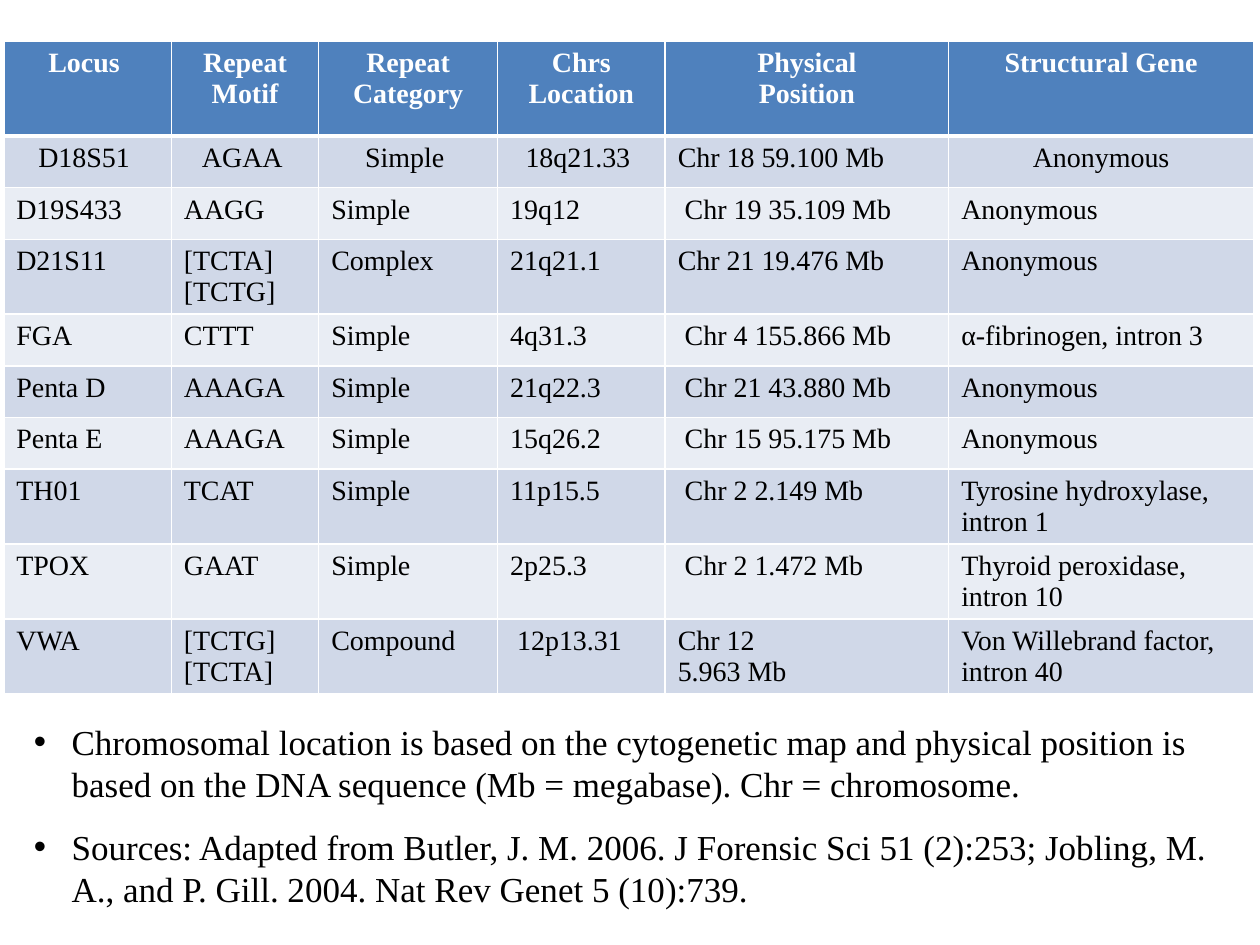
from typing import NamedTuple

from lxml.etree import SubElement
from pptx import Presentation
from pptx.dml.color import RGBColor
from pptx.enum.text import MSO_AUTO_SIZE, PP_ALIGN
from pptx.oxml.ns import qn
from pptx.util import Inches, Pt

FONT = "Times New Roman"
COLORS = {
    "header": "4F81BD",
    "odd": "D0D8E8",
    "even": "E9EDF4",
    "white": "FFFFFF",
    "black": "000000",
}
COLUMN_WIDTHS = (1.33, 1.17, 1.42, 1.33, 2.25, 2.42)
HEADER_HEIGHT = 0.75
ROW_HEIGHT = 0.41


class Marker(NamedTuple):
    locus: str
    motif: str
    category: str
    location: str
    position: str
    gene: str


class CellStyle(NamedTuple):
    fill: str
    text: str
    bold: bool
    top: float
    bottom: float


HEADER = Marker("Locus ", "Repeat\nMotif", "Repeat\nCategory", "Chrs Location",
                "Physical\nPosition", "Structural Gene")
MARKERS = [
    Marker("D18S51 ", "AGAA ", "Simple ", "18q21.33 ", "Chr 18 59.100 Mb", "Anonymous"),
    Marker("D19S433", "AAGG", "Simple", "19q12", " Chr 19 35.109 Mb", "Anonymous"),
    Marker("D21S11", "[TCTA]\n[TCTG]", "Complex", "21q21.1", "Chr 21 19.476 Mb", "Anonymous"),
    Marker("FGA", "CTTT", "Simple", "4q31.3", " Chr 4 155.866 Mb", "α-fibrinogen, intron 3"),
    Marker("Penta D", "AAAGA", "Simple", "21q22.3", " Chr 21 43.880 Mb", "Anonymous"),
    Marker("Penta E", "AAAGA", "Simple", "15q26.2", " Chr 15 95.175 Mb", "Anonymous"),
    Marker("TH01", "TCAT", "Simple", "11p15.5", " Chr 2 2.149 Mb",
           "Tyrosine hydroxylase,\nintron 1"),
    Marker("TPOX", "GAAT", "Simple", "2p25.3", " Chr 2 1.472 Mb",
           "Thyroid peroxidase,\nintron 10"),
    Marker("VWA", "[TCTG]\n[TCTA]", "Compound", " 12p13.31", "Chr 12\n5.963 Mb",
           "Von Willebrand factor, intron 40"),
]
NOTES = [
    "Chromosomal location is based on the cytogenetic map and physical position is "
    "based on the DNA sequence (Mb = megabase). Chr = chromosome.",
    "Sources: Adapted from Butler, J. M. 2006. J Forensic Sci 51 (2):253; "
    "Jobling, M. A., and P. Gill. 2004. Nat Rev Genet 5 (10):739.",
]


def set_font(paragraph, size: float, color: str, bold: bool = False) -> None:
    font = paragraph.font
    font.name = FONT
    font.size = Pt(size)
    font.bold = bold
    font.color.rgb = RGBColor.from_string(COLORS[color])


def add_borders(cell, top: float, bottom: float) -> None:
    properties = cell._tc.get_or_add_tcPr()
    for tag, width in (("a:lnL", 1), ("a:lnR", 1), ("a:lnT", top), ("a:lnB", bottom)):
        line = SubElement(properties, qn(tag), w=str(Pt(width)))
        fill = SubElement(line, qn("a:solidFill"))
        SubElement(fill, qn("a:srgbClr"), val=COLORS["white"])


def style_for(row: int) -> CellStyle:
    if row == 0:
        return CellStyle("header", "white", True, 1, 3)
    return CellStyle("odd" if row % 2 else "even", "black", False, 3 if row == 1 else 1, 1)


def fill_cell(cell, text: str, style: CellStyle, centered: bool, space_after: float) -> None:
    cell.text = text
    add_borders(cell, style.top, style.bottom)
    cell.fill.solid()
    cell.fill.fore_color.rgb = RGBColor.from_string(COLORS[style.fill])
    for paragraph in cell.text_frame.paragraphs:
        paragraph.alignment = PP_ALIGN.CENTER if centered else PP_ALIGN.LEFT
        if space_after:
            paragraph.space_after = Pt(space_after)
        set_font(paragraph, 16, style.text, style.bold)


def add_marker_table(slide) -> None:
    rows = [HEADER, *MARKERS]
    table = slide.shapes.add_table(
        len(rows), len(COLUMN_WIDTHS), Inches(0.03), Inches(0.33),
        Inches(sum(COLUMN_WIDTHS)), Inches(HEADER_HEIGHT + ROW_HEIGHT * len(MARKERS)),
    ).table
    for column, width in zip(table.columns, COLUMN_WIDTHS):
        column.width = Inches(width)
    for row_index, marker in enumerate(rows):
        table.rows[row_index].height = Inches(ROW_HEIGHT if row_index else HEADER_HEIGHT)
        style = style_for(row_index)
        for field, text in zip(Marker._fields, marker):
            centered = row_index == 0 or (row_index == 1 and field != "position")
            cell = table.cell(row_index, Marker._fields.index(field))
            fill_cell(cell, text, style, centered, 6 if row_index == 1 else 0)


def add_notes_box(slide) -> None:
    box = slide.shapes.add_textbox(Inches(0.17), Inches(5.67), Inches(9.83), Inches(1.62))
    frame = box.text_frame
    frame.word_wrap = True
    frame.auto_size = MSO_AUTO_SIZE.SHAPE_TO_FIT_TEXT
    frame.text = "\n".join(NOTES)
    for paragraph in frame.paragraphs:
        paragraph.space_after = Pt(12)
        properties = paragraph._p.get_or_add_pPr()
        properties.set("marL", str(Inches(0.3)))
        properties.set("indent", str(Inches(-0.3)))
        SubElement(properties, qn("a:buFont"), typeface="Arial")
        SubElement(properties, qn("a:buChar"), char="•")
        set_font(paragraph, 20, "black")


def main() -> None:
    presentation = Presentation()
    presentation.slide_width = Inches(10)
    presentation.slide_height = Inches(7.5)
    slide = presentation.slides.add_slide(presentation.slide_layouts[6])
    add_marker_table(slide)
    add_notes_box(slide)
    presentation.save("out.pptx")


if __name__ == "__main__":
    main()
